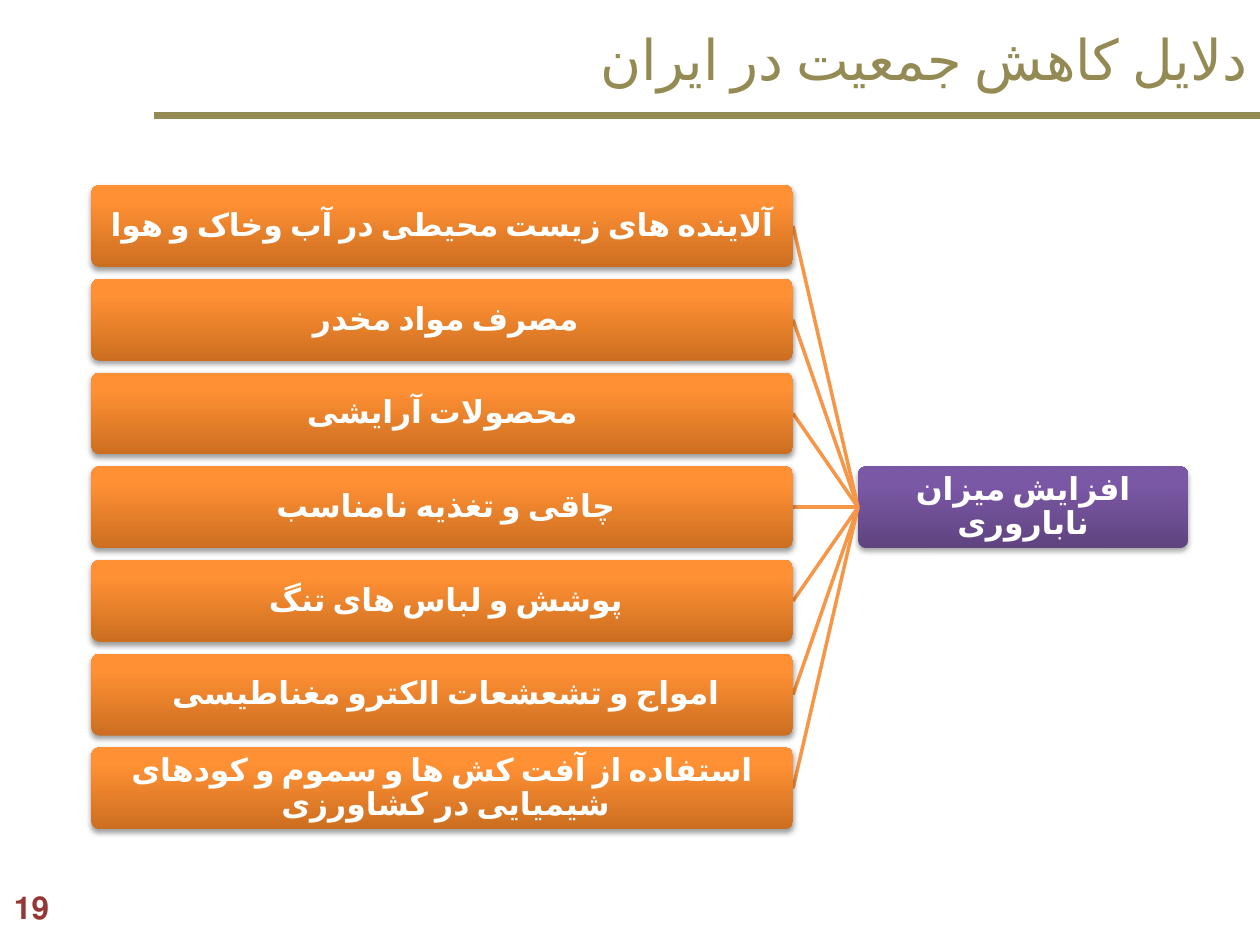
from copy import deepcopy
from dataclasses import dataclass

from lxml import etree
from pptx import Presentation
from pptx import util as u
from pptx.dml.color import RGBColor
from pptx.enum import shapes, text
from pptx.oxml.ns import qn


@dataclass(frozen=True)
class Theme:
    font: str = "Calibri"
    olive: str = "948A54"
    orange: str = "F79646"
    number: str = "953735"
    white: str = "FFFFFF"
    shadow: str = "000000"
    cause_fill: tuple[str, ...] = ("CC6E20", "FF9034", "FF9136")
    root_fill: tuple[str, ...] = ("5F4480", "7B58A6", "7C57A8")
    stops: tuple[float, ...] = (0, 0.8, 1)
    title_size: float = 32
    body_size: float = 18


@dataclass(frozen=True)
class Box:
    x: float
    y: float
    w: float
    h: float

    @property
    def mid(self) -> float:
        return self.y + self.h / 2

    @property
    def right(self) -> float:
        return self.x + self.w

    def lengths(self) -> list[u.Pt]:
        return [u.Pt(v) for v in (self.x, self.y, self.w, self.h)]


T = Theme()
CAUSES = (
    "آلاینده های زیست محیطی در آب وخاک و هوا",
    "مصرف مواد مخدر ",
    "محصولات آرایشی",
    "چاقی و تغذیه نامناسب ",
    "پوشش و لباس های تنگ ",
    "امواج و تشعشعات الکترو مغناطیسی ",
    "استفاده از آفت کش ها و سموم و کودهای شیمیایی در کشاورزی ",
)
ROW = Box(52.2, 105.8, 401, 46.8)
PITCH = 53.55
ROOT = Box(490.3, ROW.y + PITCH * (len(CAUSES) // 2), 188.6, ROW.h)


def write(sp, words: str, color: str, size: float, align, bold: bool = False,
          spacing: float = 1.0, persian: bool = True) -> None:
    tf = sp.text_frame
    tf.word_wrap = True
    tf.vertical_anchor = text.MSO_ANCHOR.MIDDLE
    p = tf.paragraphs[0]
    p.alignment = align
    p.line_spacing = spacing
    p._p.get_or_add_pPr().set("rtl", "1")
    r = p.add_run()
    r.text = words
    r.font.name = T.font
    r.font.size = u.Pt(size)
    r.font.bold = bold
    r.font.color.rgb = RGBColor.from_string(color)
    if persian:
        r._r.rPr.set("lang", "fa-IR")
        etree.SubElement(r._r.rPr, qn("a:cs"), typeface=T.font)


def add_title(s, box: Box, words: str) -> None:
    sp = s.shapes.add_textbox(*box.lengths())
    write(sp, words, T.olive, T.title_size, text.PP_ALIGN.RIGHT)


def add_number(s, box: Box, words: str) -> None:
    sp = s.shapes.add_shape(shapes.MSO_SHAPE.OVAL, *box.lengths())
    sp.shadow.inherit = False
    sp.fill.background()
    sp.line.fill.background()
    sp.text_frame.margin_left = u.Pt(6)
    sp.text_frame.margin_right = u.Pt(1)
    write(sp, words, T.number, T.body_size, text.PP_ALIGN.CENTER, True, persian=False)


def add_line(s, x1: float, y1: float, x2: float, y2: float, color: str,
             width: float) -> None:
    c = s.shapes.add_connector(shapes.MSO_CONNECTOR.STRAIGHT,
                               *(u.Pt(v) for v in (x1, y1, x2, y2)))
    c.line.color.rgb = RGBColor.from_string(color)
    c.line.width = u.Pt(width)
    etree.SubElement(c._element.spPr, qn("a:effectLst"))


def fill_gradient(sp, colors: tuple[str, ...]) -> None:
    sp.fill.gradient()
    sp.fill.gradient_angle = 90
    gs_list = sp._element.spPr.find(".//" + qn("a:gsLst"))
    gs_list.append(deepcopy(gs_list[-1]))
    for stop, color, position in zip(sp.fill.gradient_stops, colors, T.stops):
        stop.color.rgb = RGBColor.from_string(color)
        stop.position = position


def add_shadow(sp, opacity: int, distance: float) -> None:
    sp.shadow.inherit = False
    effects = sp._element.spPr.find(qn("a:effectLst"))
    shadow = etree.SubElement(effects, qn("a:outerShdw"), blurRad=str(u.Pt(3.1)),
                              dist=str(u.Pt(distance)), dir="5400000", rotWithShape="0")
    color = etree.SubElement(shadow, qn("a:srgbClr"), val=T.shadow)
    etree.SubElement(color, qn("a:alpha"), val=str(opacity * 1000))


def add_card(s, box: Box, words: str, colors: tuple[str, ...], opacity: int,
             distance: float) -> None:
    sp = s.shapes.add_shape(shapes.MSO_SHAPE.ROUNDED_RECTANGLE, *box.lengths())
    sp.adjustments[0] = 0.1
    fill_gradient(sp, colors)
    sp.line.fill.background()
    add_shadow(sp, opacity, distance)
    tf = sp.text_frame
    tf.margin_left = tf.margin_right = tf.margin_top = tf.margin_bottom = u.Pt(1)
    write(sp, words, T.white, T.body_size, text.PP_ALIGN.CENTER, True, 0.9)


def main() -> None:
    prs = Presentation()
    prs.slide_width, prs.slide_height = u.Pt(720), u.Pt(540)
    s = prs.slides.add_slide(prs.slide_layouts[6])

    add_number(s, Box(-14.4, 496.8, 59.8, 43.2), "19")
    add_line(s, 720, 66, 88, 66, T.olive, 4.5)
    add_title(s, Box(72, 0, 648, 66), "دلایل کاهش جمعیت در ایران")

    add_card(s, ROOT, "افزایش میزان ناباروری", T.root_fill, 35, 1.8)
    for i, cause in enumerate(CAUSES):
        row = Box(ROW.x, ROW.y + i * PITCH, ROW.w, ROW.h)
        add_line(s, ROOT.x, ROOT.mid, row.right, row.mid, T.orange, 2)
        add_card(s, row, cause, T.cause_fill, 38, 1.6)

    prs.save("out.pptx")


if __name__ == "__main__":
    main()
